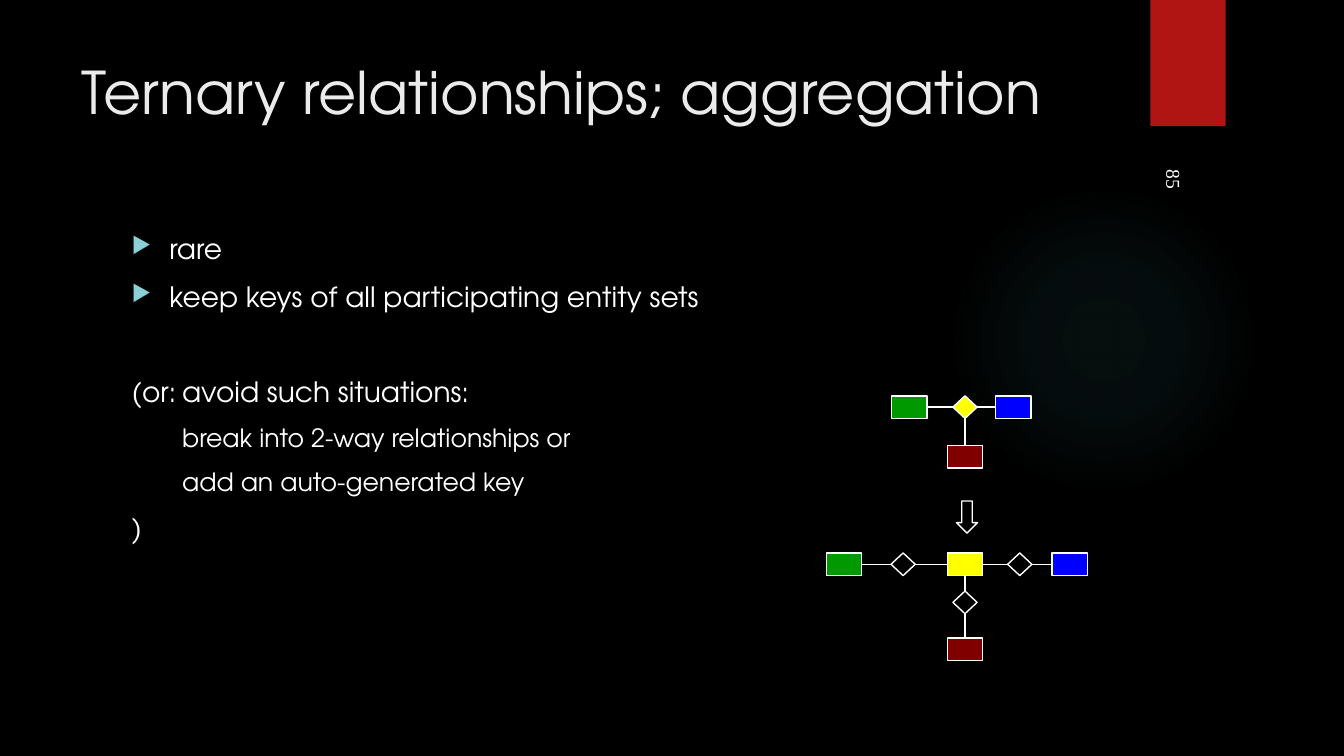
from lxml.etree import SubElement
from pptx import Presentation
from pptx.dml.color import RGBColor
from pptx.enum.shapes import MSO_CONNECTOR, MSO_SHAPE
from pptx.enum.text import MSO_ANCHOR, MSO_AUTO_SIZE, PP_ALIGN
from pptx.oxml.ns import qn
from pptx.util import Cm, Pt

TOP, LEFT, BOTTOM, RIGHT = range(4)


def rgb(value):
    return RGBColor.from_string(value)


def add_xml(parent, tag, **attributes):
    return SubElement(parent, qn(tag), attributes)


def write(paragraph, text, font="TeX Gyre Adventor", size=20, color="FFFFFF",
          before=0, level=0, margin=0, hanging=0, bullet=None, tab=None):
    properties = paragraph._p.get_or_add_pPr()
    properties.set("marL", str(Cm(margin)))
    properties.set("indent", str(-Cm(hanging)))
    if bullet:
        add_xml(add_xml(properties, "a:buClr"), "a:srgbClr", val="8AD0D6")
        add_xml(properties, "a:buSzPct", val="80000")
        add_xml(properties, "a:buChar", char=bullet)
    else:
        add_xml(properties, "a:buNone")
    if tab:
        add_xml(add_xml(properties, "a:tabLst"), "a:tab", pos=str(Cm(tab)), algn="l")
    paragraph.level = level
    paragraph.alignment = PP_ALIGN.LEFT
    paragraph.space_before = Pt(before)
    run = paragraph.add_run()
    run.text = text
    run.font.name = font
    run.font.size = Pt(size)
    run.font.color.rgb = rgb(color)


class DarkSlide:
    line_color = "FFFFFF"
    line_width = Pt(1)

    def __init__(self, presentation):
        self.slide = presentation.slides.add_slide(presentation.slide_layouts[5])
        background = self.slide.background.fill
        background.solid()
        background.fore_color.rgb = rgb("000000")

    def title(self, text, left, top, width, height):
        title = self.slide.shapes.title
        title.left, title.top, title.width, title.height = map(Cm, (left, top, width, height))
        title.text_frame.auto_size = MSO_AUTO_SIZE.NONE
        title.text_frame.vertical_anchor = MSO_ANCHOR.TOP
        write(title.text_frame.paragraphs[0], text, size=42, color="EBEBEB")

    def text(self, paragraphs, left, top, width, height, rotation=0):
        box = self.slide.shapes.add_textbox(*map(Cm, (left, top, width, height)))
        box.rotation = rotation
        frame = box.text_frame
        frame.word_wrap = True
        for index, (words, style) in enumerate(paragraphs):
            write(frame.add_paragraph() if index else frame.paragraphs[0], words, **style)

    def shape(self, kind, x, y, width, height, fill=None, outlined=True):
        shape = self.slide.shapes.add_shape(
            kind, Cm(x - width / 2), Cm(y - height / 2), Cm(width), Cm(height))
        shape.shadow.inherit = False
        if fill:
            shape.fill.solid()
            shape.fill.fore_color.rgb = rgb(fill)
        else:
            shape.fill.background()
        if outlined:
            shape.line.color.rgb = rgb(self.line_color)
            shape.line.width = self.line_width
        else:
            shape.line.fill.background()
        return shape

    def glow(self, x, y, diameter, color, stops):
        glow = self.shape(MSO_SHAPE.OVAL, x, y, diameter, diameter, outlined=False)
        glow.fill.gradient()
        gradient = glow._element.spPr.find(qn("a:gradFill"))
        for child in list(gradient):
            gradient.remove(child)
        stop_list = add_xml(gradient, "a:gsLst")
        for position, opacity in stops:
            stop = add_xml(stop_list, "a:gs", pos=str(position * 1000))
            tint = add_xml(stop, "a:srgbClr", val=color)
            add_xml(tint, "a:alpha", val=str(opacity * 1000))
        center = add_xml(gradient, "a:path", path="circle")
        add_xml(center, "a:fillToRect", l="50000", t="50000", r="50000", b="50000")

    def entity(self, x, y, fill):
        return self.shape(MSO_SHAPE.RECTANGLE, x, y, 0.89, 0.57, fill)

    def relationship(self, x, y, fill=None):
        return self.shape(MSO_SHAPE.DIAMOND, x, y, 0.61, 0.57, fill)

    def join(self, start, start_side, end, end_side):
        link = self.slide.shapes.add_connector(MSO_CONNECTOR.STRAIGHT, 0, 0, 0, 0)
        link.begin_connect(start, start_side)
        link.end_connect(end, end_side)
        link.line.color.rgb = rgb(self.line_color)
        link.line.width = self.line_width
        add_xml(link._element.spPr, "a:effectLst")

    def star(self, center, left_chain, right_chain, lower_chain):
        for chain, side, opposite in ((left_chain, LEFT, RIGHT),
                                      (right_chain, RIGHT, LEFT),
                                      (lower_chain, BOTTOM, TOP)):
            for start, end in zip([center] + chain, chain):
                self.join(start, side, end, opposite)


def main():
    presentation = Presentation()
    presentation.slide_width, presentation.slide_height = Cm(33.87), Cm(19.05)
    page = DarkSlide(presentation)

    page.glow(27.81, 8.56, 7.82, "50B9C1", [(0, 7), (36, 6), (69, 0)])
    page.shape(MSO_SHAPE.RECTANGLE, 29.94, 1.59, 1.9, 3.18, "B01513", outlined=False)
    page.text([("85", dict(font="Times New Roman", size=14))],
              28.22, 4.98, 2.74, 0.84, rotation=90)
    page.title("Ternary relationships; aggregation", 1.8, 1.27, 26.14, 3.89)

    bulleted = dict(bullet="▶", margin=0.95, hanging=0.95)
    nested = dict(size=18, level=1, margin=1.27, before=10)
    page.text([
        ("rare", bulleted),
        ("keep keys of all participating entity sets", dict(bulleted, before=10)),
        ("(or:\tavoid such situations:", dict(before=44, tab=1.5)),
        ("break into 2-way relationships or", nested),
        ("add an auto-generated key", nested),
        (")", dict(before=10)),
    ], 3.07, 5.72, 24.84, 11.66)

    green, maroon, blue, yellow = "009900", "800000", "0000FF", "FFFF00"
    middle = 24.32

    ternary_y = 10.26
    page.star(page.relationship(middle, ternary_y, yellow),
              [page.entity(22.92, ternary_y, green)],
              [page.entity(25.54, ternary_y, blue)],
              [page.entity(middle, 11.51, maroon)])

    page.shape(MSO_SHAPE.DOWN_ARROW, 24.37, 13.03, 0.53, 0.81)

    binary_y = 14.22
    page.star(page.entity(middle, binary_y, yellow),
              [page.relationship(22.76, binary_y), page.entity(21.27, binary_y, green)],
              [page.relationship(25.7, binary_y), page.entity(26.96, binary_y, blue)],
              [page.relationship(middle, 15.18), page.entity(middle, 16.36, maroon)])

    presentation.save("out.pptx")


if __name__ == "__main__":
    main()
